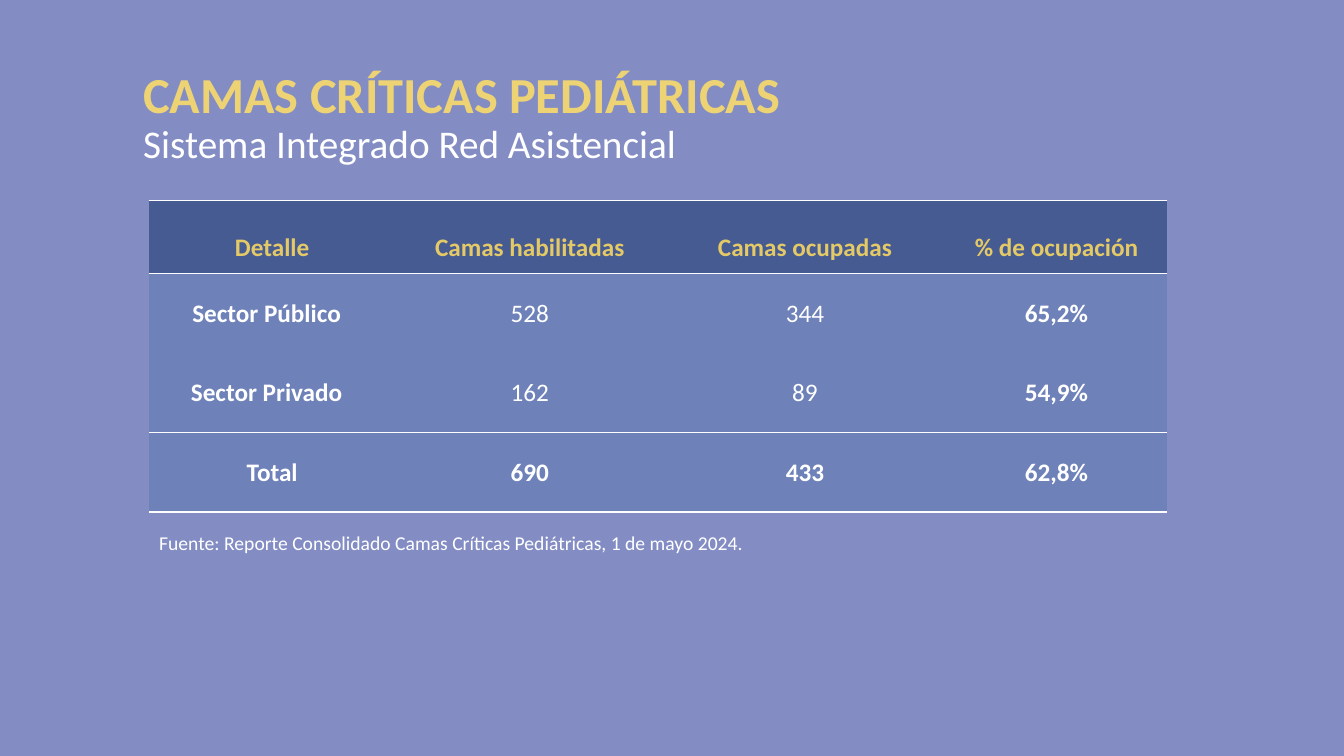
from lxml import etree
from pptx import Presentation
from pptx.dml.color import RGBColor
from pptx.enum.text import MSO_ANCHOR, MSO_AUTO_SIZE, PP_ALIGN
from pptx.oxml.ns import qn
from pptx.util import Inches, Pt

WHITE, GOLD, PALE_GOLD = "FFFFFF", "E4C967", "EDD373"
BACKGROUND, HEADER_FILL, BODY_FILL = "838DC4", "475B93", "6E82B9"

COLUMNS = [2.44, 2.67, 2.79, 2.2]
HEADER_HEIGHT, ROW_HEIGHT = 0.72, 0.79
TABLE_LEFT, TABLE_TOP = 1.48, 1.99
BEDS = [
    ["Detalle", "Camas habilitadas", "Camas ocupadas", "% de ocupación"],
    ["Sector Público", "528", "344", "65,2%"],
    ["Sector Privado", "162", "89", "54,9%"],
    ["Total", "690", "433", "62,8%"],
]
# One entry per horizontal edge, from the top of the table to its bottom
RULED_EDGES = [True, True, False, True, True]


def rgb(color):
    return RGBColor.from_string(color)


def write(p, text, size=18, color=WHITE, bold=False, align=PP_ALIGN.LEFT, spacing=1.0):
    p.alignment = align
    p.line_spacing = spacing
    r = p.add_run()
    r.text = text
    r.font.name = "Calibri"
    r.font.size = Pt(size)
    r.font.bold = bold
    r.font.color.rgb = rgb(color)


def place(sp, left, top, width, height):
    sp.left, sp.top, sp.width, sp.height = map(Inches, (left, top, width, height))


def set_borders(cell, top, bottom):
    """Rule the chosen horizontal edges and clear the others; call before filling."""
    tc_pr = cell._tc.get_or_add_tcPr()
    for tag, ruled in (("lnL", False), ("lnR", False), ("lnT", top), ("lnB", bottom)):
        ln = etree.SubElement(tc_pr, qn(f"a:{tag}"), w=str(Pt(1)))
        if ruled:
            fill = etree.SubElement(ln, qn("a:solidFill"))
            etree.SubElement(fill, qn("a:srgbClr"), val=WHITE)
        else:
            etree.SubElement(ln, qn("a:noFill"))


def format_cell(cell, text, row, col):
    header, total = row == 0, row == len(BEDS) - 1
    set_borders(cell, RULED_EDGES[row], RULED_EDGES[row + 1])
    cell.fill.solid()
    cell.fill.fore_color.rgb = rgb(HEADER_FILL if header else BODY_FILL)
    cell.vertical_anchor = MSO_ANCHOR.MIDDLE
    side = 0.02 if header else 0.01
    sector = col == 0 and not (header or total)
    cell.margin_left = Inches(side)
    cell.margin_right = Inches(0.12 if sector else side)
    cell.margin_top = Inches(0.2 if header else 0.01)
    cell.margin_bottom = 0
    write(cell.text_frame.paragraphs[0], text, color=GOLD if header else WHITE,
          bold=header or total or col in (0, len(COLUMNS) - 1),
          align=PP_ALIGN.CENTER, spacing=1.07 if header else 1.0)


def add_title(s):
    title = s.shapes.title
    place(title, 1.32, 0.67, 11.5, 1.01)
    tf = title.text_frame
    tf.auto_size = MSO_AUTO_SIZE.NONE
    tf.vertical_anchor = MSO_ANCHOR.MIDDLE
    write(tf.paragraphs[0], "CAMAS CRÍTICAS PEDIÁTRICAS", size=36,
          color=PALE_GOLD, bold=True, spacing=0.9)
    write(tf.add_paragraph(), "Sistema Integrado Red Asistencial", size=28, spacing=0.9)


def add_beds_table(s):
    heights = [HEADER_HEIGHT] + [ROW_HEIGHT] * (len(BEDS) - 1)
    table = s.shapes.add_table(
        len(BEDS), len(COLUMNS), Inches(TABLE_LEFT), Inches(TABLE_TOP),
        Inches(sum(COLUMNS)), Inches(sum(heights))).table
    table.horz_banding = False
    for column, width in zip(table.columns, COLUMNS):
        column.width = Inches(width)
    for row, (values, height) in enumerate(zip(BEDS, heights)):
        table.rows[row].height = Inches(height)
        for col, text in enumerate(values):
            format_cell(table.cell(row, col), text, row, col)


def add_source(s):
    sp = s.shapes.add_textbox(0, 0, 0, 0)
    place(sp, TABLE_LEFT, 5.21, 10.37, 0.34)
    tf = sp.text_frame
    tf.word_wrap = True
    tf.auto_size = MSO_AUTO_SIZE.SHAPE_TO_FIT_TEXT
    tf.vertical_anchor = MSO_ANCHOR.MIDDLE
    write(tf.paragraphs[0],
          "Fuente: Reporte Consolidado Camas Críticas Pediátricas, 1 de mayo 2024.", size=14)


def main():
    prs = Presentation()
    prs.slide_width, prs.slide_height = Inches(13.33), Inches(7.5)
    s = prs.slides.add_slide(prs.slide_layouts.get_by_name("Title Only"))
    s.background.fill.solid()
    s.background.fill.fore_color.rgb = rgb(BACKGROUND)
    add_title(s)
    add_beds_table(s)
    add_source(s)
    prs.save("out.pptx")


if __name__ == "__main__":
    main()
